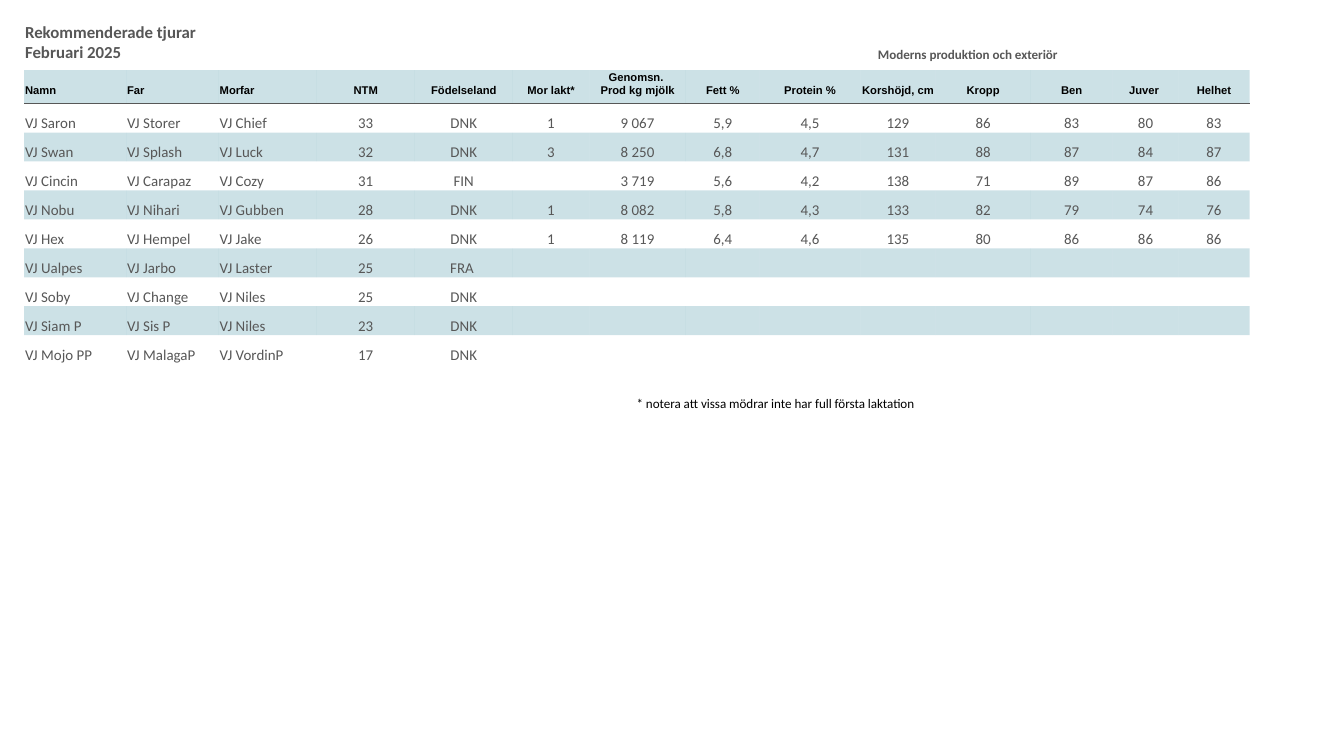
from lxml import etree
from pptx import Presentation
from pptx.dml.color import RGBColor
from pptx.enum.text import MSO_ANCHOR, PP_ALIGN
from pptx.oxml.ns import qn
from pptx.util import Inches, Pt

BOTTOM = MSO_ANCHOR.BOTTOM
LEFT, CENTER = PP_ALIGN.LEFT, PP_ALIGN.CENTER
GREY, BLACK, TEAL = "575757", "000000", "006B85"
BAND_OPACITY = 20
PLAIN_STYLE = "{2D5ABB26-0587-4C30-8999-92F81FD0307C}"

# Content
TITLE = "Rekommenderade tjurar Februari 2025"
GROUP = "Moderns produktion och exteriör"
NOTE = "* notera att vissa mödrar inte har full första laktation"
HEADERS = ["Namn", "Far", "Morfar", "NTM", "Födelseland", "Mor lakt*",
           "Genomsn. \vProd kg mjölk", "Fett %", "Protein %", "Korshöjd, cm",
           "Kropp", "Ben", "Juver ", "Helhet"]
BULLS = [
    ["VJ Saron", "VJ Storer", "VJ Chief", "33", "DNK", "1", "9 067",
     "5,9", "4,5", "129", "86", "83", "80", "83"],
    ["VJ Swan", "VJ Splash", "VJ Luck", "32", "DNK", "3", "8 250",
     "6,8", "4,7", "131", "88", "87", "84", "87"],
    ["VJ Cincin", "VJ Carapaz", "VJ Cozy", "31", "FIN", "", "3 719",
     "5,6", "4,2", "138", "71", "89", "87", "86"],
    ["VJ Nobu", "VJ Nihari", "VJ Gubben", "28", "DNK", "1", "8 082",
     "5,8", "4,3", "133", "82", "79", "74", "76"],
    ["VJ Hex", "VJ Hempel", "VJ Jake", "26", "DNK", "1", "8 119",
     "6,4", "4,6", "135", "80", "86", "86", "86"],
    ["VJ Ualpes", "VJ Jarbo", "VJ Laster", "25", "FRA "],
    ["VJ Soby", "VJ Change", "VJ Niles", "25", "DNK"],
    ["VJ Siam P", "VJ Sis P", "VJ Niles", "23", "DNK"],
    ["VJ Mojo PP", "VJ MalagaP", "VJ VordinP", "17", "DNK"],
]

# Grid, in inches
SLIDE_WIDTH = 10
SLIDE_HEIGHT = SLIDE_WIDTH * 9 / 16
TABLE_WIDTH = 9.12
SHARES = [0.76, 0.69, 0.73, 0.73, 0.73, 0.57, 0.72,
          0.55, 0.75, 0.56, 0.71, 0.61, 0.49, 0.53]
COLUMNS = [share * TABLE_WIDTH / sum(SHARES) for share in SHARES]
TITLE_HEIGHT, HEADER_HEIGHT, TABLE_HEIGHT = 0.36, 0.25, 2.55
BULL_HEIGHT = (TABLE_HEIGHT - TITLE_HEIGHT - HEADER_HEIGHT) / len(BULLS)
ROWS = [TITLE_HEIGHT, HEADER_HEIGHT] + [BULL_HEIGHT] * len(BULLS)
TEXT_COLUMNS = 3
GROUP_START = 7

# Text formats
TITLE_FONT = {"size": Pt(9), "name": "Calibri", "bold": True, "color": GREY}
GROUP_FONT = {**TITLE_FONT, "size": Pt(7)}
HEADER_FONT = {"size": Pt(6), "name": "Arial", "bold": True, "color": BLACK}
BULL_FONT = {"size": Pt(8), "name": "Calibri", "bold": False, "color": GREY}
NOTE_FONT = {**BULL_FONT, "size": Pt(7), "color": BLACK}


def rgb(value):
    return RGBColor.from_string(value)


def add_grid(page, left, top, columns, rows):
    frame = page.shapes.add_table(
        len(rows), len(columns), Inches(left), Inches(top),
        Inches(sum(columns)), Inches(sum(rows)))
    table = frame.table
    table.first_row = table.horz_banding = False
    table._tbl.tblPr.find(qn("a:tableStyleId")).text = PLAIN_STYLE
    for column, width in zip(table.columns, columns):
        column.width = Inches(width)
    for row, height in zip(table.rows, rows):
        row.height = Inches(height)
    return table


def fill_cell(cell, text, font, align=LEFT, bottom=0.05, band=False):
    margin = Pt(0.5)
    layout = {"vertical_anchor": BOTTOM, "margin_left": margin,
              "margin_right": margin, "margin_top": margin,
              "margin_bottom": Inches(bottom)}
    for name, value in layout.items():
        setattr(cell, name, value)
    para = cell.text_frame.paragraphs[0]
    para.text = text
    para.alignment = align
    for span in para.runs:
        for name in ("size", "name", "bold"):
            setattr(span.font, name, font[name])
        span.font.color.rgb = rgb(font["color"])
    if not text:  # keeps an empty cell from stretching its row
        end = para._p.get_or_add_endParaRPr()
        end.set("sz", str(int(font["size"].pt * 100)))
    if band:
        cell.fill.solid()
        cell.fill.fore_color.rgb = rgb(TEAL)
        color = cell._tc.tcPr.find(".//" + qn("a:srgbClr"))
        etree.SubElement(color, qn("a:alpha"), val=str(BAND_OPACITY * 1000))
    else:
        cell.fill.background()


def rule_below(cell, color, width):
    line = etree.Element(qn("a:lnB"), w=str(Pt(width)))
    fill = etree.SubElement(line, qn("a:solidFill"))
    etree.SubElement(fill, qn("a:srgbClr"), val=color)
    cell._tc.get_or_add_tcPr().insert(0, line)


def column_align(index):
    return LEFT if index < TEXT_COLUMNS else CENTER


deck = Presentation()
deck.slide_width, deck.slide_height = Inches(SLIDE_WIDTH), Inches(SLIDE_HEIGHT)
page = deck.slides.add_slide(deck.slide_layouts[6])

# Title row
bulls = add_grid(page, 0.18, 0.16, COLUMNS, ROWS)
last = len(COLUMNS) - 1
for index in range(len(COLUMNS)):
    fill_cell(bulls.cell(0, index), "", TITLE_FONT)
for first, end in ((0, 1), (5, 6), (GROUP_START, last)):
    bulls.cell(0, first).merge(bulls.cell(0, end))
fill_cell(bulls.cell(0, 0), TITLE, TITLE_FONT)
fill_cell(bulls.cell(0, GROUP_START), GROUP, GROUP_FONT, CENTER)

# Column headings
for index, heading in enumerate(HEADERS):
    cell = bulls.cell(1, index)
    fill_cell(cell, heading, HEADER_FONT, column_align(index), band=True)
    rule_below(cell, GREY, 1)

# One row per bull, every second one banded
for number, bull in enumerate(BULLS):
    values = bull + [""] * (len(COLUMNS) - len(bull))
    for index, value in enumerate(values):
        fill_cell(bulls.cell(number + 2, index), value, BULL_FONT,
                  column_align(index), bottom=0, band=number % 2 == 1)

# Footnote
note = add_grid(page, 4.73, 2.9, [3.58], [0.22])
fill_cell(note.cell(0, 0), NOTE, NOTE_FONT)

deck.save("out.pptx")
